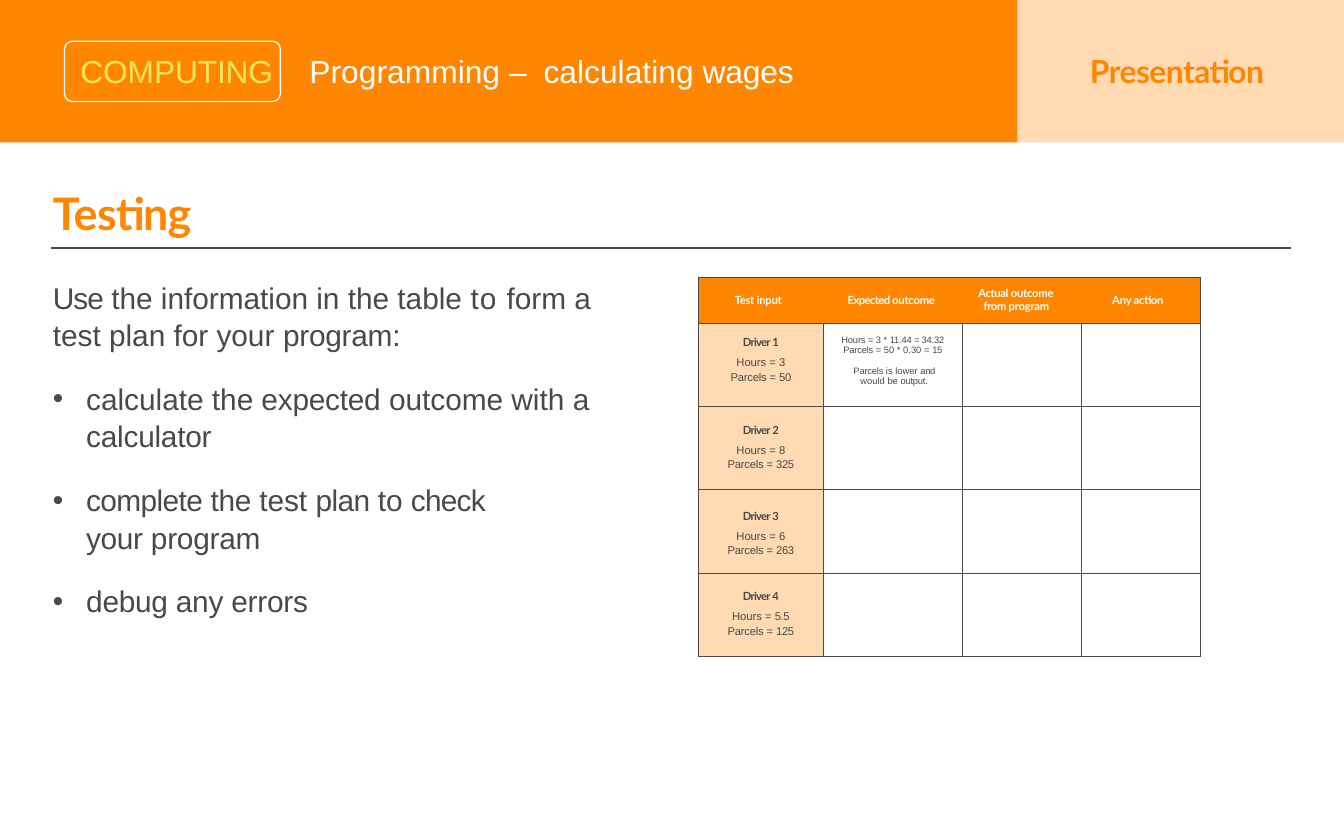
import pptx
import pptx.util
import pptx.dml.color
import pptx.enum.shapes
import pptx.enum.text
from lxml import etree
from pptx.oxml.ns import qn

Cm, Pt = pptx.util.Cm, pptx.util.Pt
SHAPE = pptx.enum.shapes.MSO_SHAPE
ALIGN = pptx.enum.text.PP_ALIGN
LEFT, MID = ALIGN.LEFT, ALIGN.CENTER

HUES = {"orange": "FF8600", "lemon": "F2E55B", "white": "FFFFFF", "ink": "4A494A"}


def hue(name):
    return pptx.dml.color.RGBColor.from_string(HUES[name])


def paint(fill, name, pct=100):
    """Solid fill with an opacity in percent."""
    fill.solid()
    fill.fore_color.rgb = hue(name)
    return pct


def fade(props, pct):
    clr = props.find(qn("a:solidFill"))[0]
    etree.SubElement(clr, qn("a:alpha"), val=str(pct * 1000))


def write(para, runs, size, tint, font="Arial", bold=False):
    """Add (text, letter spacing in points) runs to a paragraph."""
    for text, gap in runs:
        run = para.add_run()
        run.text = text
        run.font.size, run.font.name, run.font.bold = Pt(size), font, bold
        run.font.color.rgb = hue(tint)
        run._r.get_or_add_rPr().set("spc", str(round(gap * 100)))


def inset(para, left=0, first=0, right=0):
    props = para._p.get_or_add_pPr()
    for key, val in (("marL", left), ("indent", first), ("marR", right)):
        props.set(key, str(int(Cm(val))))
    return props


def setup(shape, box, left=0.03):
    """Place a text holder and trim its margins."""
    shape.left, shape.top, shape.width, shape.height = map(Cm, box)
    frame = shape.text_frame
    frame.word_wrap = True
    frame.auto_size = pptx.enum.text.MSO_AUTO_SIZE.NONE
    frame.vertical_anchor = pptx.enum.text.MSO_ANCHOR.TOP
    frame.margin_left, frame.margin_top = Cm(left), Cm(0.03)
    frame.margin_right = frame.margin_bottom = 0
    frame.paragraphs[0].alignment = LEFT
    return frame


def label(slide, box, runs, size, tint, font="Arial", bold=False):
    shape = slide.shapes.add_textbox(*map(Cm, box))
    write(setup(shape, box).paragraphs[0], runs, size, tint, font, bold)


def block(slide, kind, box):
    shape = slide.shapes.add_shape(kind, *map(Cm, box))
    shape.shadow.inherit = False
    return shape


def banner(slide, box):
    x, y, w, h = box
    split = 19.23
    # Colour bands
    pale = block(slide, SHAPE.RECTANGLE, (x + split, y, w - split, h))
    main = block(slide, SHAPE.RECTANGLE, (x, y, split, h))
    for band, pct in ((pale, 30), (main, 100)):
        paint(band.fill, "orange")
        band.line.fill.background()
        if pct < 100:
            fade(band._element.spPr, pct)

    # Subject title, brought in front of the bands
    title = slide.shapes.title
    slide.shapes._spTree.append(title._element)
    frame = setup(title, (x + 1.24, y + 0.94, 4.04, 0.79), 0.28)
    write(frame.paragraphs[0], [("COMPUTING", -0.1)], 17, "lemon")
    badge = block(slide, SHAPE.ROUNDED_RECTANGLE, (x + 1.22, y + 0.78, 4.08, 1.14))
    badge.adjustments[0] = 0.13
    badge.fill.background()
    badge.line.color.rgb, badge.line.width = hue("white"), Pt(0.68)

    # Topic and type of sheet
    label(slide, (x + 20.57, y + 0.94, 3.6, 0.79), [("Presentation", -0.3)],
          17, "orange", "Lato", True)
    label(slide, (x + 5.82, y + 0.94, 9.4, 0.79),
          [("Programming ", 0), ("– ", 2.1), ("calculating ", 0), ("wages", -0.1)],
          17, "white")


def heading(slide, box):
    x, y, w, h = box
    label(slide, (x, y, 4, 1.09), [("Testing", -0.3)], 24, "orange", "Lato", True)
    rule = slide.shapes.add_connector(
        pptx.enum.shapes.MSO_CONNECTOR.STRAIGHT, *map(Cm, (x, y + h, x + w, y + h)))
    rule.line.color.rgb, rule.line.width = hue("ink"), Pt(1)
    etree.SubElement(rule._element.spPr, qn("a:effectLst"))


def tasks(slide, box):
    intro = [("Use ", -0.5), ("the information in the table ", 0), ("to ", 0.5),
             ("form ", 0), ("a ", -0.5), ("test plan for your ", 0), ("program:", -0.1)]
    steps = [
        ([("calculate the", 0), (" expected ", -0.1), ("outcome with ", 0),
          ("a ", -0.5), ("calculator", -0.1)], 0),
        ([("complete ", -0.3), ("the ", -0.2), ("test ", 0), ("plan ", -0.3), ("to ", 0),
          ("check ", -0.4), ("your ", -0.2), ("program", -0.1)], 1.8),
        ([("debug any errors", -0.1)], 0),
    ]
    frame = setup(slide.shapes.add_textbox(*map(Cm, box)), box)
    para = frame.paragraphs[0]
    para.line_spacing = 1.04
    write(para, intro, 16, "ink")
    for runs, right in steps:
        para = frame.add_paragraph()
        para.line_spacing, para.space_before = 1.04, Pt(14.2)
        props = inset(para, 0.63, -0.63, right)
        etree.SubElement(props, qn("a:buFont"), typeface="Arial")
        etree.SubElement(props, qn("a:buChar"), char="•")
        write(para, runs, 16, "ink")


def edge(cell, bare):
    """Draw the cell's borders, leaving out the sides in bare."""
    props = cell._tc.get_or_add_tcPr()
    for side in "LRTB":
        line = etree.SubElement(props, qn("a:ln" + side), w=str(int(Pt(0.25))))
        if side in bare:
            etree.SubElement(line, qn("a:noFill"))
        else:
            fill = etree.SubElement(line, qn("a:solidFill"))
            etree.SubElement(fill, qn("a:srgbClr"), val=HUES["ink"])


def fill_cell(cell, top, paras):
    """Each paragraph is (runs, space before, font size, tint, font, bold)."""
    cell.margin_top = Cm(top)
    frame = cell.text_frame
    for i, (runs, before, *style) in enumerate(paras):
        para = frame.add_paragraph() if i else frame.paragraphs[0]
        para.alignment = MID
        if before:
            para.space_before = Pt(before)
        write(para, runs, *style)


def plan(slide, box):
    x, y, w, h = box
    heads = [
        ([("Test ", -0.2), ("input", -0.1)], 0.69, 0, 0, 0.32),
        ([("Expected ", -0.3), ("outcome", -0.1)], 0.46, 0, 0, 0.32),
        ([("Actual ", -0.2), ("outcome ", -0.1), ("from ", -0.2), ("program", -0.1)],
         0.4, -0.1, 0.3, 0.18),
        ([("Any action", -0.1)], 0.58, 0, 0, 0.32),
    ]
    # Driver number, hours, parcels, top margin
    drivers = [("1", "3", "50", 0.23), ("2", "8", "325", 0.32),
               ("3", "6", "263", 0.37), ("4", "5.5", "125", 0.32)]
    table = slide.shapes.add_table(5, 4, *map(Cm, box)).table
    table.first_row = table.horz_banding = False
    for col, wide in zip(table.columns, (2.36, 2.63, 2.25, 2.25)):
        col.width = Cm(wide)
    table.rows[0].height = Cm(0.88)
    for row in list(table.rows)[1:]:
        row.height = Cm((h - 0.88) / 4)

    # Borders and fills
    for r in range(5):
        for c in range(4):
            cell = table.cell(r, c)
            cell.margin_left = cell.margin_right = 0
            cell.margin_top = cell.margin_bottom = 0
            bare = ("L" if c else "") + ("R" if c < 3 else "")
            edge(cell, "" if r else bare)
            if r and c:
                cell.fill.background()
            else:
                paint(cell.fill, "orange")
                if r:
                    fade(cell._tc.tcPr, 30)

    # Header row
    for c, (runs, left, first, right, top) in enumerate(heads):
        cell = table.cell(0, c)
        cell.margin_top = Cm(top)
        para = cell.text_frame.paragraphs[0]
        inset(para, left, first, right)
        write(para, runs, 6, "white", "Lato", True)

    # Test inputs
    for r, (num, hours, load, top) in enumerate(drivers, 1):
        fill_cell(table.cell(r, 0), top, [
            ([("Driver ", -0.4), (num, -0.5)], 0, 6, "ink", "Lato", True),
            ([("Hours = ", 0), (hours, -0.2)], 3.9, 6, "ink"),
            ([("Parcels ", -0.1), ("= ", 0), (load, -0.2)], 1.1, 6, "ink")])

    # Worked example
    cell = table.cell(1, 1)
    fill_cell(cell, 0.23, [
        ([("Hours = ", -0.1), ("3 * ", 0), ("11.44 = 34.32", -0.1)], 0, 5, "ink"),
        ([("Parcels ", -0.1), ("= 50 * 0.30 = ", 0), ("15", -0.2)], 0, 5, "ink"),
        ([("Parcels ", -0.1), ("is lower ", 0), ("and ", -0.2), ("would be", 0),
          (" output.", -0.1)], 6, 5, "ink")])
    for para in cell.text_frame.paragraphs:
        para.line_spacing = 0.95
    inset(para, 0.5, 0, 0.45)


def main():
    deck = pptx.Presentation()
    deck.slide_width, deck.slide_height = Cm(25.4), Cm(15.85)
    slide = deck.slides.add_slide(deck.slide_layouts[5])
    banner(slide, (0, 0, 25.4, 2.69))
    heading(slide, (0.97, 3.48, 23.42, 1.21))
    tasks(slide, (0.97, 5.23, 10.3, 6.32))
    plan(slide, (13.2, 5.23, 9.49, 7.16))
    deck.save("out.pptx")


if __name__ == "__main__":
    main()
